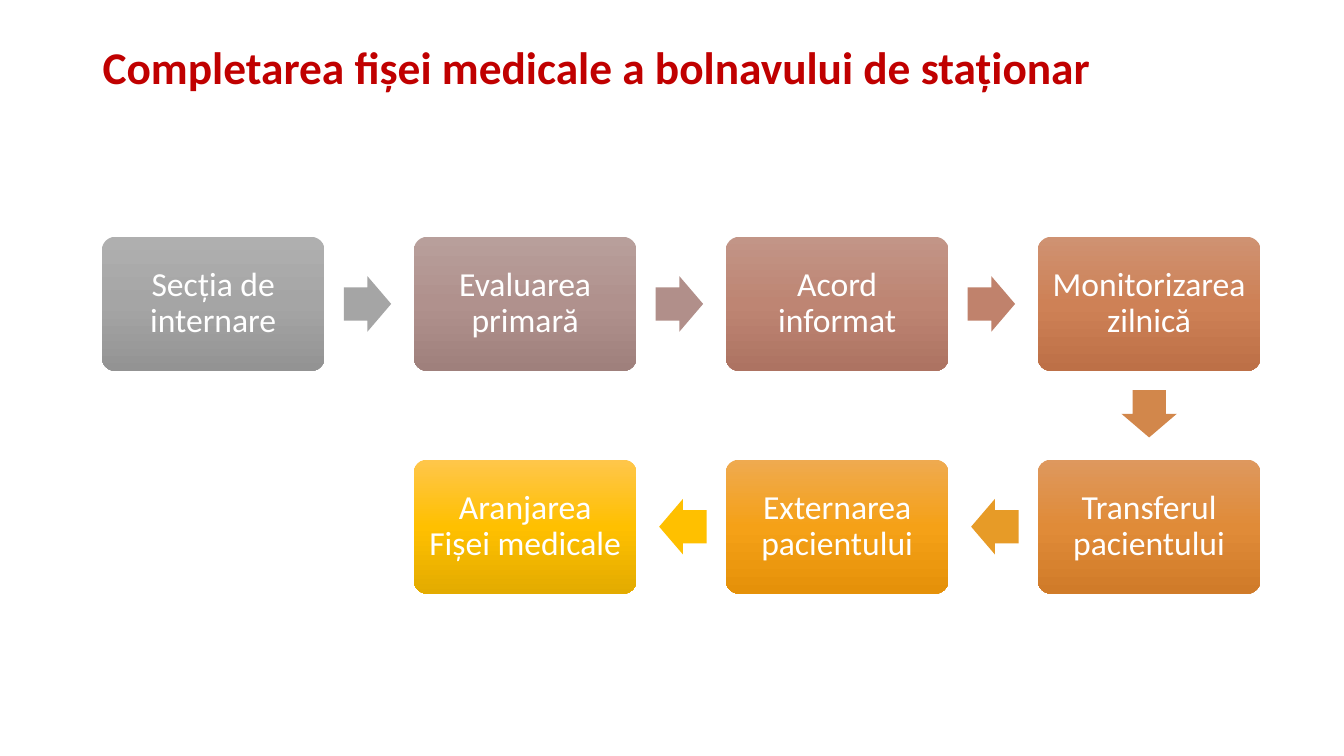
from copy import deepcopy
from pptx import Presentation
from pptx.dml.color import RGBColor
from pptx.enum.shapes import MSO_SHAPE
from pptx.enum.text import MSO_ANCHOR, PP_ALIGN
from pptx.oxml.ns import qn
from pptx.util import Inches, Pt


def color(code):
    return RGBColor.from_string(code)


def write(shape, text, size, code, bold=False, align=PP_ALIGN.LEFT, side=0.1, edge=0.05):
    frame = shape.text_frame
    frame.word_wrap = True
    frame.vertical_anchor = MSO_ANCHOR.MIDDLE
    frame.margin_left = frame.margin_right = Inches(side)
    frame.margin_top = frame.margin_bottom = Inches(edge)
    line = frame.paragraphs[0]
    line.alignment = align
    line.line_spacing = 0.9
    run = line.add_run()
    run.text = text
    run.font.name = "Calibri"
    run.font.size = Pt(size)
    run.font.bold = bold
    run.font.color.rgb = color(code)


deck = Presentation()
deck.slide_width, deck.slide_height = Inches(13.33), Inches(7.5)
slide = deck.slides.add_slide(deck.slide_layouts[6])
shapes = slide.shapes

# Title
title = shapes.add_textbox(Inches(0.92), Inches(0.4), Inches(11.5), Inches(0.58))
write(title, "Completarea fișei medicale a bolnavului de staționar", 32.4, "C00000", bold=True)

# Steps: text, column, row, gradient, direction and colour of the next arrow
steps = [
    ("Secția de internare", 0, 0, ("AFAFAF", "A5A5A5", "939393"), "right", "A5A5A5"),
    ("Evaluarea primară", 1, 0, ("B89F9B", "B0918D", "9F807C"), "right", "B18F8A"),
    ("Acord informat", 2, 0, ("C29587", "BE8573", "AD7362"), "right", "C0826C"),
    ("Monitorizarea zilnică", 3, 0, ("CF9272", "CE8156", "BD7047"), "down", "D2874B"),
    ("Transferul pacientului", 3, 1, ("DE985E", "E08B38", "D07B29"), "left", "E79B27"),
    ("Externarea pacientului", 2, 1, ("EFAA50", "F5A117", "E59109"), "left", "FFC000"),
    ("Aranjarea Fișei medicale", 1, 1, ("FFC64B", "FFC000", "E3AB00"), None, None),
]
# Arrow offset from its box, and rotation
turns = {"right": (2.4, 0.39, 0), "down": (0.87, 1.48, 90), "left": (-0.66, 0.39, 180)}
wide, high = 2.21, 1.33

for text, col, row, shades, way, tint in steps:
    # Box
    left, top = 1.01 + col * wide * 1.4, 2.35 + row * wide
    box = shapes.add_shape(MSO_SHAPE.ROUNDED_RECTANGLE, Inches(left), Inches(top),
                           Inches(wide), Inches(high))
    box.adjustments[0] = 0.1
    box.shadow.inherit = False
    box.line.fill.background()
    box.fill.gradient()
    box.fill.gradient_angle = 270
    stops = box._element.spPr.find(qn("a:gradFill")).find(qn("a:gsLst"))
    stops.insert(1, deepcopy(stops[0]))
    for stop, spot, shade in zip(box.fill.gradient_stops, (0, 0.5, 1), shades):
        stop.position = spot
        stop.color.rgb = color(shade)
    write(box, text, 24, "FFFFFF", align=PP_ALIGN.CENTER, edge=0.1)

    # Arrow to the next step
    if way:
        across, down, turn = turns[way]
        arrow = shapes.add_shape(MSO_SHAPE.RIGHT_ARROW, Inches(left + across),
                                 Inches(top + down), Inches(0.47), Inches(0.55))
        arrow.adjustments[0] = 0.6
        arrow.adjustments[1] = 0.5
        arrow.rotation = turn
        arrow.shadow.inherit = False
        arrow.line.fill.background()
        arrow.fill.solid()
        arrow.fill.fore_color.rgb = color(tint)

deck.save("out.pptx")
